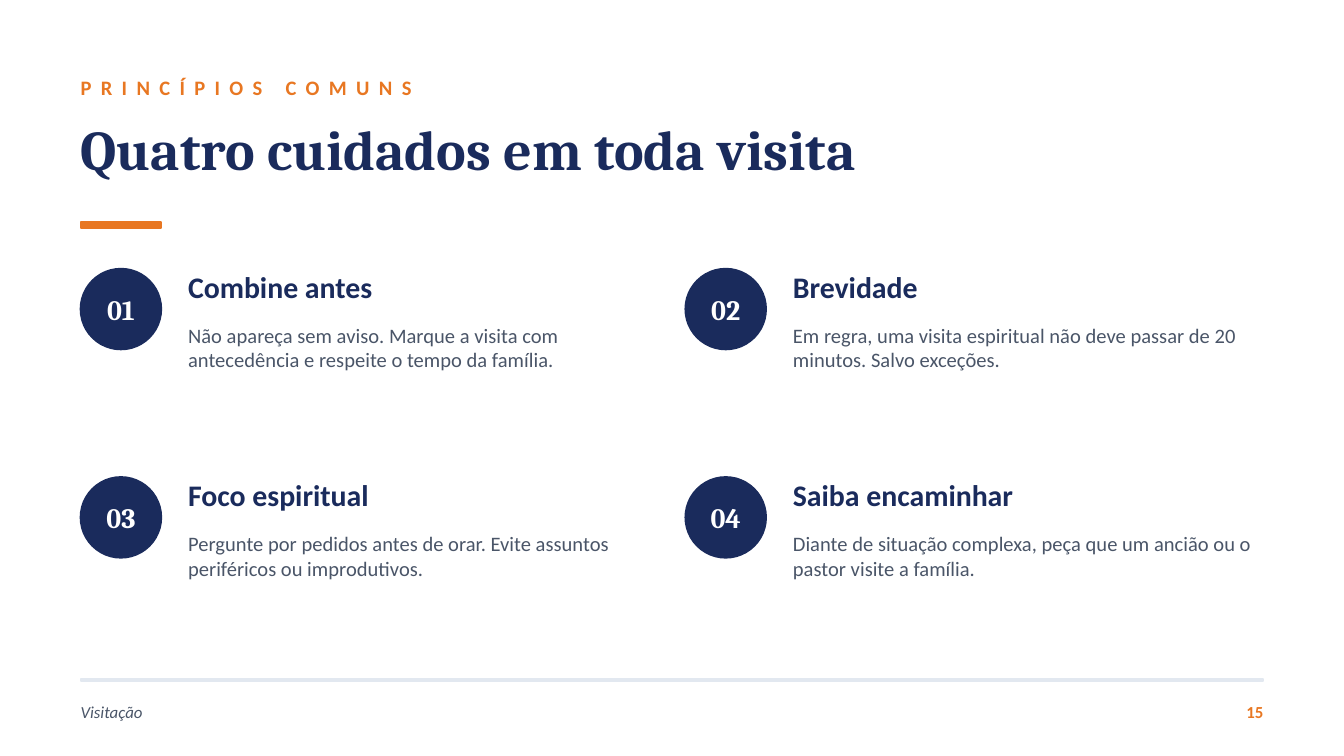
from pptx import Presentation
from pptx.dml.color import RGBColor
from pptx.enum.shapes import MSO_SHAPE
from pptx.enum.text import MSO_ANCHOR, PP_ALIGN
from pptx.util import Inches, Pt

RECTANGLE, OVAL = MSO_SHAPE.RECTANGLE, MSO_SHAPE.OVAL
TOP, MIDDLE = MSO_ANCHOR.TOP, MSO_ANCHOR.MIDDLE
LEFT, CENTER, RIGHT = PP_ALIGN.LEFT, PP_ALIGN.CENTER, PP_ALIGN.RIGHT

COLORS = {
    "navy": "1A2B5C",
    "orange": "E87722",
    "slate": "4A5568",
    "mist": "E2E8F0",
    "white": "FFFFFF",
}
COLUMN = Inches(0.1)
ROW = Inches(0.05)
MARGIN = 6

deck = Presentation()
deck.slide_width = Inches(10)
deck.slide_height = deck.slide_width * 9 // 16
page = deck.slides.add_slide(deck.slide_layouts[6])
page.background.fill.solid()
page.background.fill.fore_color.rgb = RGBColor.from_string(COLORS["white"])


def add_text(text, column, row, columns, rows, *, size, color, font="Calibri",
             bold=False, italic=False, align=LEFT, anchor=TOP, spacing=0):
    box = page.shapes.add_textbox(column * COLUMN, row * ROW, columns * COLUMN, rows * ROW)
    frame = box.text_frame
    frame.word_wrap = True
    frame.vertical_anchor = anchor
    frame.margin_left = frame.margin_right = frame.margin_top = frame.margin_bottom = 0
    para = frame.paragraphs[0]
    para.alignment = align
    span = para.add_run()
    span.text = text
    span.font.name = font
    span.font.size = Pt(size)
    span.font.bold = bold
    span.font.italic = italic
    span.font.color.rgb = RGBColor.from_string(COLORS[color])
    if spacing:
        span.font._element.set("spc", str(spacing * 100))


def add_filled(kind, column, row, columns, rows, color):
    shape = page.shapes.add_shape(
        kind, column * COLUMN, row * ROW, columns * COLUMN, round(rows * ROW))
    shape.shadow.inherit = False
    shape.fill.solid()
    shape.fill.fore_color.rgb = RGBColor.from_string(COLORS[color])
    shape.line.color.rgb = RGBColor.from_string(COLORS[color])
    shape.line.width = Pt(1)


add_text("PRINCÍPIOS COMUNS", MARGIN, 10, 60, 6, size=11, color="orange",
         bold=True, anchor=MIDDLE, spacing=5)
add_text("Quatro cuidados em toda visita", MARGIN, 17, 90, 14, size=30, color="navy",
         font="Cambria", bold=True)
add_filled(RECTANGLE, MARGIN, 33, 6, 1, "orange")

principles = [
    ("Combine antes", "Não apareça sem aviso. Marque a visita com antecedência e respeite o tempo da família."),
    ("Brevidade", "Em regra, uma visita espiritual não deve passar de 20 minutos. Salvo exceções."),
    ("Foco espiritual", "Pergunte por pedidos antes de orar. Evite assuntos periféricos ou improdutivos."),
    ("Saiba encaminhar", "Diante de situação complexa, peça que um ancião ou o pastor visite a família."),
]
for index, (heading, advice) in enumerate(principles):
    column = MARGIN + 45 * (index % 2)
    row = 40 + 31 * (index // 2)
    badge = (column, row, 6, 12)
    add_filled(OVAL, *badge, "navy")
    add_text(f"{index + 1:02d}", *badge, size=15, color="white", font="Cambria",
             bold=True, align=CENTER, anchor=MIDDLE)
    add_text(heading, column + 8, row, 35, 8, size=16, color="navy", bold=True)
    add_text(advice, column + 8, row + 8, 36, 19, size=11, color="slate")

add_filled(RECTANGLE, MARGIN, 101, 88, 0.4, "mist")
add_text("Visitação", MARGIN, 103, 50, 6, size=9, color="slate", italic=True, anchor=MIDDLE)
add_text("15", 89, 103, 5, 6, size=9, color="orange", bold=True, align=RIGHT, anchor=MIDDLE)

deck.save("out.pptx")
